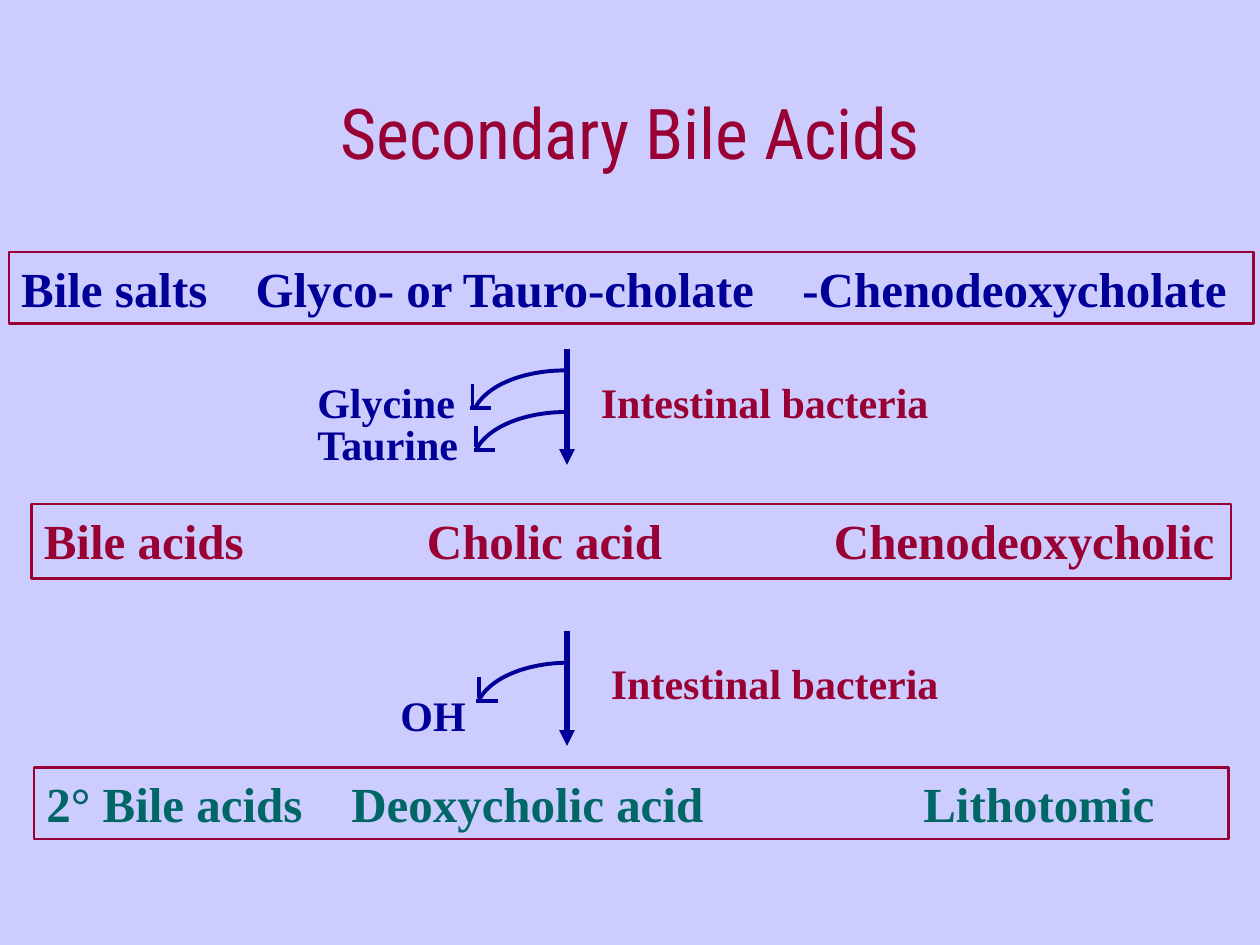
from pptx import Presentation
from pptx.dml.color import RGBColor
from pptx.enum.shapes import MSO_CONNECTOR, MSO_SHAPE
from pptx.enum.text import MSO_ANCHOR, PP_ALIGN
from pptx.oxml.ns import qn
from pptx.util import Pt
from lxml.etree import SubElement

PX = 9144  # 100 px to the inch
RED, BLUE, GREEN = "990033", "000099", "006666"
SERIF = "Times New Roman"


def color(hex_code):
    return RGBColor.from_string(hex_code)


def add_line(shapes, x1, y1, x2, y2, width):
    line = shapes.add_connector(
        MSO_CONNECTOR.STRAIGHT, x1 * PX, y1 * PX, x2 * PX, y2 * PX)
    line.line.color.rgb = color(BLUE)
    line.line.width = Pt(width)
    SubElement(line._element.spPr, qn("a:effectLst"))
    return line


prs = Presentation()
prs.slide_width, prs.slide_height = 1000 * PX, 750 * PX
s = prs.slides.add_slide(prs.slide_layouts[5])
s.background.fill.solid()
s.background.fill.fore_color.rgb = color("CCCCFF")

# Title
title = s.shapes.title
title.left, title.top, title.width, title.height = 75 * PX, 42 * PX, 850 * PX, 125 * PX
tf = title.text_frame
tf.text = "Secondary Bile Acids"
tf.vertical_anchor = MSO_ANCHOR.MIDDLE
p = tf.paragraphs[0]
p.alignment = PP_ALIGN.CENTER
font = p.runs[0].font
font.name, font.size, font.color.rgb = "Roboto Condensed", Pt(40), color(RED)

# Framed rows, with their columns on tab stops
rows = [
    (7, 200, 988, 57, BLUE, (186, 620),
     "Bile salts\tGlyco- or Tauro-cholate\t-Chenodeoxycholate"),
    (25, 400, 952, 59, RED, (304, 627),
     "Bile acids\tCholic acid\tChenodeoxycholic"),
    (27, 609, 948, 57, GREEN, (242, 696),
     "2° Bile acids\tDeoxycholic acid\tLithotomic"),
]
for x, y, w, h, text_color, stops, text in rows:
    sp = s.shapes.add_shape(MSO_SHAPE.RECTANGLE, x * PX, y * PX, w * PX, h * PX)
    sp.shadow.inherit = False
    sp.fill.background()
    sp.line.color.rgb = color(RED)
    sp.line.width = Pt(1.5)
    tf = sp.text_frame
    tf.word_wrap = True
    tf.vertical_anchor = MSO_ANCHOR.TOP
    tf.text = text
    p = tf.paragraphs[0]
    p.alignment = PP_ALIGN.LEFT
    tabs = SubElement(p._p.get_or_add_pPr(), qn("a:tabLst"))
    for stop in stops:
        SubElement(tabs, qn("a:tab"), pos=str(stop * PX), algn="l")
    for r in p.runs:
        r.font.name, r.font.size, r.font.bold = SERIF, Pt(28), True
        r.font.color.rgb = color(text_color)

# Reaction arrows between the rows
for top, bottom in [(277, 369), (501, 592)]:
    arrow = add_line(s.shapes, 450, top, 450, bottom, 3)
    SubElement(arrow.line._get_or_add_ln(), qn("a:tailEnd"), type="triangle")

# Labels beside the arrows
labels = [
    (467, 294, 280, RED, "Intestinal bacteria"),
    (475, 517, 280, RED, "Intestinal bacteria"),
    (242, 294, 129, BLUE, "Glycine"),
    (242, 327, 135, BLUE, "Taurine"),
    (308, 542, 72, BLUE, "OH"),
]
for x, y, w, text_color, text in labels:
    tf = s.shapes.add_textbox(x * PX, y * PX, w * PX, 50 * PX).text_frame
    tf.word_wrap = False
    tf.text = text
    font = tf.paragraphs[0].runs[0].font
    font.name, font.size, font.bold = SERIF, Pt(24), True
    font.color.rgb = color(text_color)

# Curved leaving-group arrows: a Bezier from the main arrow to the tip, then a corner head
CURVE = [(72, -30), (38, -30), (9, -18), (0, 0)]
STEPS = 24
for tip_x, tip_y, corner_x in [(377, 324, 375), (378, 357, 378), (380, 556, 380)]:
    shapes = s.shapes.add_group_shape().shapes
    points = []
    for i in range(STEPS + 1):
        t = i / STEPS
        weights = [(1 - t) ** 3, 3 * t * (1 - t) ** 2, 3 * t ** 2 * (1 - t), t ** 3]
        dx, dy = (sum(k * c for k, c in zip(weights, axis)) for axis in zip(*CURVE))
        points.append(((tip_x + dx) * PX, (tip_y + dy) * PX))
    pen = shapes.build_freeform(*points[0])
    pen.add_line_segments(points[1:], close=False)
    arc = pen.convert_to_shape()
    arc.shadow.inherit = False
    arc.fill.background()
    arc.line.color.rgb = color(BLUE)
    arc.line.width = Pt(2.25)
    add_line(shapes, corner_x - 2, tip_y, corner_x + 15, tip_y, 2.25)
    add_line(shapes, corner_x, tip_y - 2, corner_x, tip_y - 19, 2.25)

prs.save("out.pptx")
